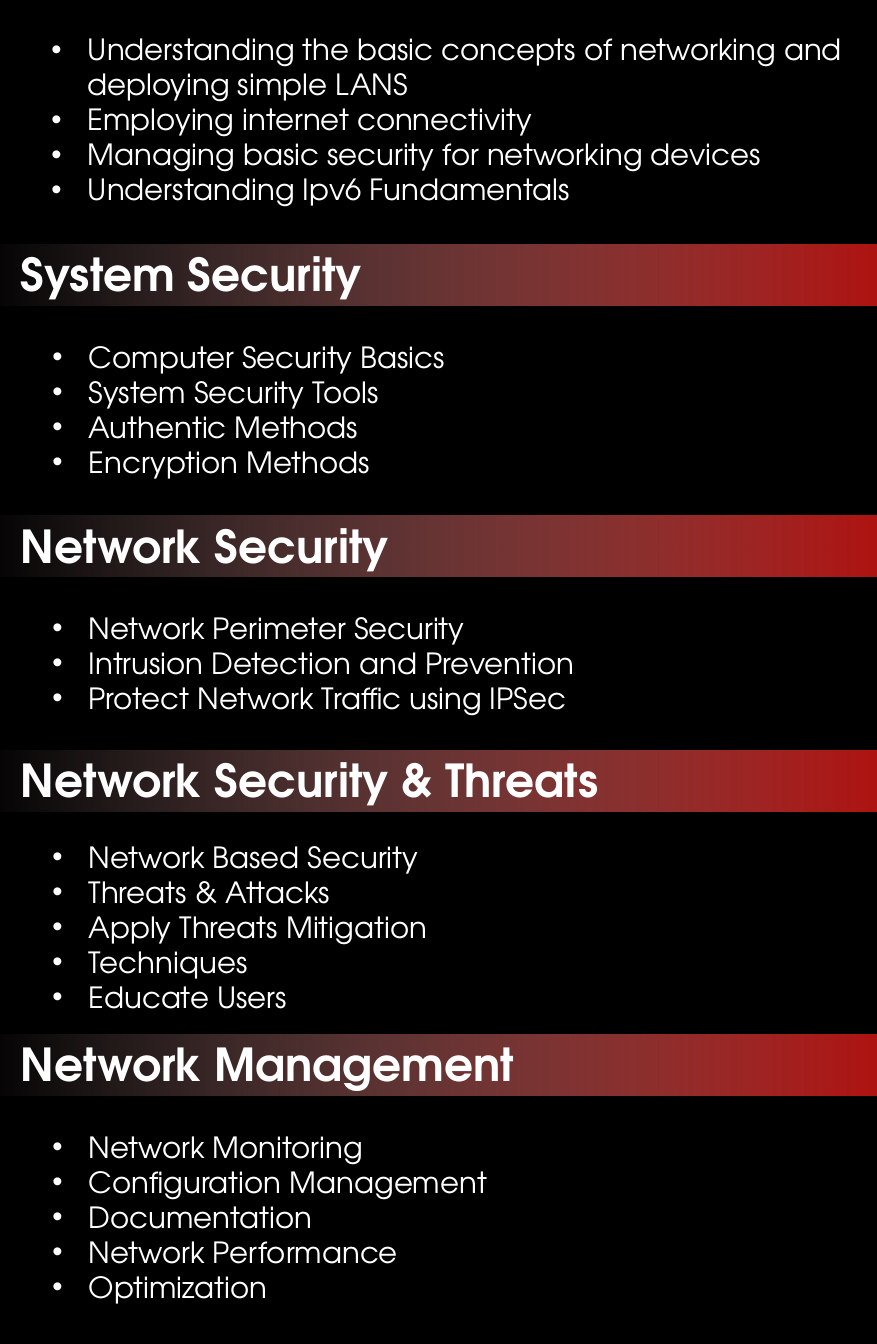
import dataclasses

import lxml.etree
import pptx
import pptx.dml.color
import pptx.enum.shapes
import pptx.enum.text
import pptx.oxml.ns
import pptx.shapes.autoshape
import pptx.slide
import pptx.text.text
import pptx.util

Inches = pptx.util.Inches
RGBColor = pptx.dml.color.RGBColor
qn = pptx.oxml.ns.qn

BLACK = RGBColor(0x00, 0x00, 0x00)
WHITE = RGBColor(0xFF, 0xFF, 0xFF)
PINK = RGBColor(0xE8, 0xBE, 0xBE)
RED = RGBColor(0xB0, 0x15, 0x13)
FONT_NAME = "TeX Gyre Adventor"
BULLET_INDENT = 0.31
LINE_HEIGHT = 0.3
TEXT_MARGINS = 0.1


@dataclasses.dataclass(frozen=True)
class Section:
    heading: str
    band_top: float
    topics_top: float
    topics: tuple[str, ...]


INTRODUCTION = (
    "Understanding the basic concepts of networking and deploying simple LANS",
    "Employing internet connectivity",
    "Managing basic security for networking devices",
    "Understanding Ipv6 Fundamentals",
)

SECTIONS = (
    Section("System Security", 2.09, 2.85, (
        "Computer Security Basics", "System Security Tools",
        "Authentic Methods", "Encryption Methods")),
    Section("Network Security", 4.41, 5.17, (
        "Network Perimeter Security", "Intrusion Detection and Prevention",
        "Protect Network Traffic using IPSec")),
    Section("Network Security & Threats", 6.42, 7.13, (
        "Network Based Security", "Threats & Attacks",
        "Apply Threats Mitigation", "Techniques", "Educate Users")),
    Section("Network Management", 8.85, 9.61, (
        "Network Monitoring", "Configuration Management", "Documentation",
        "Network Performance", "Optimization")),
)


def add_bullet(paragraph: pptx.text.text._Paragraph) -> None:
    """Give a paragraph a round bullet with a hanging indent."""
    properties = paragraph._p.get_or_add_pPr()
    properties.set("marL", str(Inches(BULLET_INDENT)))
    properties.set("indent", str(-Inches(BULLET_INDENT)))
    lxml.etree.SubElement(properties, qn("a:buFont"), typeface="Arial")
    lxml.etree.SubElement(properties, qn("a:buChar"), char="•")


def add_text(slide: pptx.slide.Slide, lines: tuple[str, ...], *,
             left: float, top: float, width: float, height: float,
             size: int, bold: bool = False, bulleted: bool = False) -> None:
    """Add a text box with one paragraph for each line."""
    box = slide.shapes.add_textbox(
        Inches(left), Inches(top), Inches(width), Inches(height))
    frame = box.text_frame
    frame.word_wrap = True
    frame.auto_size = pptx.enum.text.MSO_AUTO_SIZE.SHAPE_TO_FIT_TEXT
    for index, line in enumerate(lines):
        paragraph = frame.add_paragraph() if index else frame.paragraphs[0]
        if bulleted:
            add_bullet(paragraph)
        run = paragraph.add_run()
        run.text = line
        run.font.name = FONT_NAME
        run.font.size = pptx.util.Pt(size)
        run.font.bold = bold
        run.font.color.rgb = WHITE


def add_topics(slide: pptx.slide.Slide, topics: tuple[str, ...], *,
               left: float, top: float, line_count: int) -> None:
    """Add a bulleted list of topics."""
    add_text(slide, topics, left=left, top=top, width=7.15,
             height=TEXT_MARGINS + LINE_HEIGHT * line_count,
             size=18, bulleted=True)


def add_band(slide: pptx.slide.Slide, top: float) -> None:
    """Add a band that fades from transparent pink to red."""
    band = slide.shapes.add_shape(
        pptx.enum.shapes.MSO_SHAPE.RECTANGLE,
        Inches(-0.23), Inches(top), Inches(7.73), Inches(0.52))
    band.shadow.inherit = False
    band.line.fill.background()
    band.fill.gradient()
    band.fill.gradient_angle = 0
    for stop, color, position in zip(band.fill.gradient_stops, (PINK, RED), (0, 1)):
        stop.color.rgb = color
        stop.position = position
    pink_element = next(band._element.iter(qn("a:srgbClr")))
    lxml.etree.SubElement(pink_element, qn("a:alpha"), val="0")


def add_section(slide: pptx.slide.Slide, section: Section) -> None:
    """Add a heading on its band and the topics below."""
    add_band(slide, section.band_top)
    add_text(slide, (section.heading,), left=0.08, top=section.band_top - 0.03,
             width=7.11, height=0.57, size=28, bold=True)
    add_topics(slide, section.topics, left=0.35, top=section.topics_top,
               line_count=len(section.topics))


def main() -> None:
    """Build the course outline slide."""
    presentation = pptx.Presentation()
    presentation.slide_width = Inches(7.5)
    presentation.slide_height = Inches(11.5)
    slide = presentation.slides.add_slide(presentation.slide_layouts[6])
    slide.background.fill.solid()
    slide.background.fill.fore_color.rgb = BLACK
    add_topics(slide, INTRODUCTION, left=0.34, top=0.22,
               line_count=len(INTRODUCTION) + 1)
    for section in SECTIONS:
        add_section(slide, section)
    presentation.save("out.pptx")


if __name__ == "__main__":
    main()
